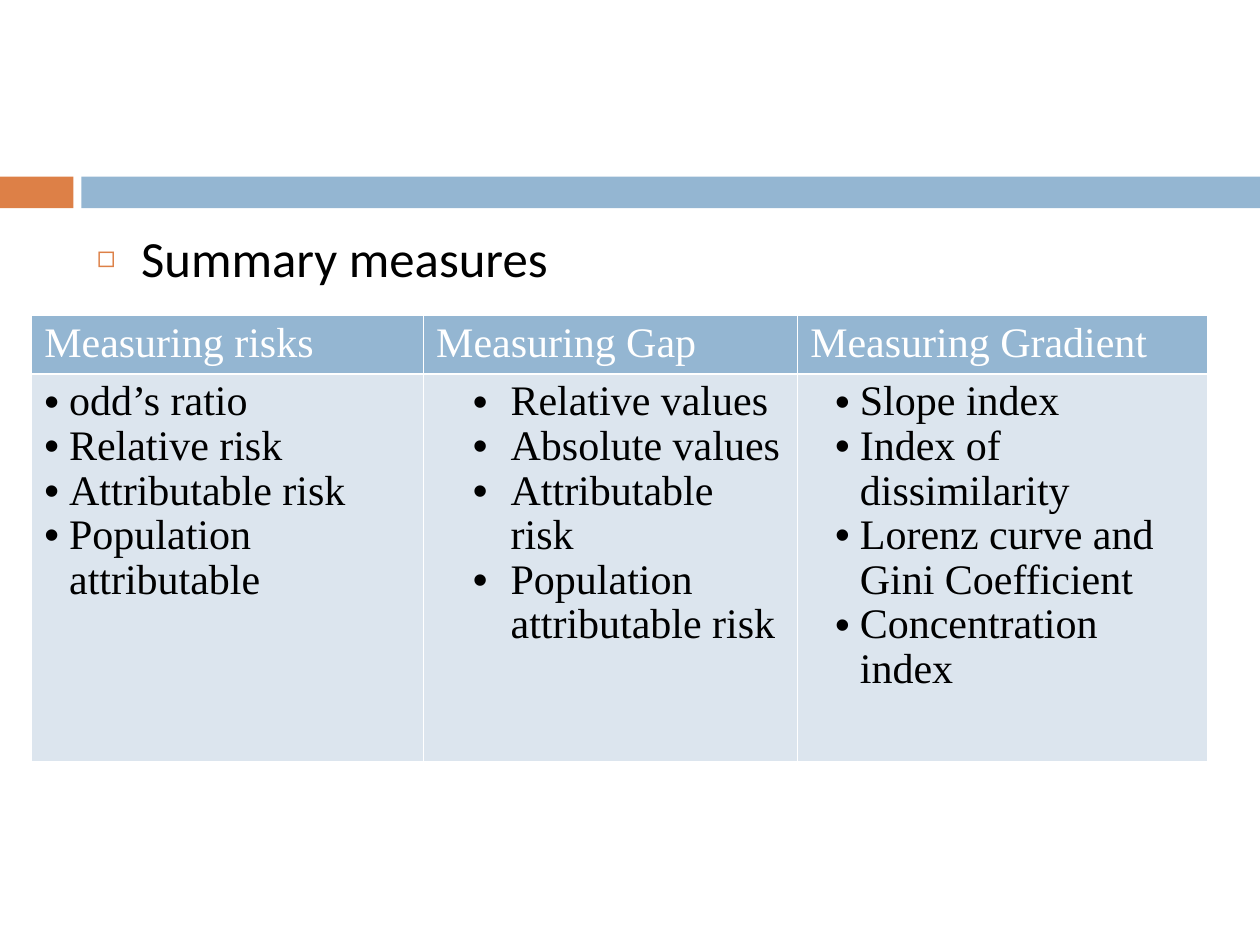
from pptx import Presentation
from pptx.dml.color import RGBColor
from pptx.enum import shapes, text
from pptx.oxml import parse_xml
from pptx.oxml.ns import nsdecls
from pptx.util import Cm, Pt

BLUE, ORANGE, PALE, WHITE, BLACK = "94B6D2", "DD8047", "DCE5EE", "FFFFFF", "000000"
HEADING = "Summary measures"
LEFT, JUSTIFY = text.PP_ALIGN.LEFT, text.PP_ALIGN.JUSTIFY
BARS = [(0, 1.48, ORANGE), (1.64, 23.76, BLUE)]
COLUMNS = [
    dict(title="Measuring risks", width=7.9, margin=0.5, hang=0.5, align=LEFT,
         items=["odd’s ratio", "Relative risk", "Attributable risk",
                "Population attributable"]),
    dict(title="Measuring Gap", width=7.54, margin=1.5, hang=0.76, align=JUSTIFY,
         items=["Relative values", "Absolute values", "Attributable risk",
                "Population attributable risk"]),
    dict(title="Measuring Gradient", width=8.26, margin=1, hang=0.5, align=LEFT,
         items=["Slope index", "Index of dissimilarity",
                "Lorenz curve and Gini Coefficient", "Concentration index"]),
]
ROW_HEIGHTS = [1.18, 7.82]


def rgb(value):
    return RGBColor.from_string(value)


def fill(obj, color):
    obj.fill.solid()
    obj.fill.fore_color.rgb = rgb(color)


def write(tf, lines, size=24, font="Times New Roman", color=BLACK, align=LEFT,
          spacing=0.96, before=0, bullet=None, bullet_color=BLACK,
          bullet_size=100, margin=0, hang=0):
    for i, line in enumerate(lines):
        p = tf.add_paragraph() if i else tf.paragraphs[0]
        p.alignment, p.line_spacing, p.space_before = align, spacing, Pt(before)
        r = p.add_run()
        r.text = line
        r.font.size, r.font.name, r.font.bold = Pt(size), font, False
        r.font.color.rgb = rgb(color)
        if bullet:
            pPr = p._p.get_or_add_pPr()
            pPr.set("marL", str(Cm(margin)))
            pPr.set("indent", str(-Cm(hang)))
            for tag in (f'buClr {nsdecls("a")}><a:srgbClr val="{bullet_color}"/></a:buClr',
                        f'buSzPct {nsdecls("a")} val="{bullet_size * 1000}"/',
                        f'buFont {nsdecls("a")} typeface="Arial"/',
                        f'buChar {nsdecls("a")} char="{bullet}"/'):
                pPr.append(parse_xml(f"<a:{tag}>"))


def border(cell, color=WHITE, width=1):
    tcPr = cell._tc.get_or_add_tcPr()
    for side in "LRTB":
        tcPr.append(parse_xml(
            f'<a:ln{side} {nsdecls("a")} w="{Pt(width)}"><a:solidFill>'
            f'<a:srgbClr val="{color}"/></a:solidFill></a:ln{side}>'))


def main():
    prs = Presentation()
    prs.slide_width, prs.slide_height = Cm(25.4), Cm(19.05)
    s = prs.slides.add_slide(prs.slide_layouts[1])
    title = s.shapes.title._element
    title.getparent().remove(title)

    for left, width, color in BARS:
        sp = s.shapes.add_shape(shapes.MSO_SHAPE.RECTANGLE,
                                Cm(left), Cm(3.56), Cm(width), Cm(0.64))
        sp.shadow.inherit = False
        fill(sp, color)
        sp.line.fill.background()

    body = s.placeholders[1]
    body.left, body.top, body.width, body.height = Cm(1.7), Cm(4.45), Cm(22.66), Cm(12.5)
    body.text_frame.auto_size = text.MSO_AUTO_SIZE.NONE
    write(body.text_frame, [HEADING], size=29, font="Calibri", spacing=1, before=7,
          bullet="◻", bullet_color=ORANGE, bullet_size=60, margin=0.89, hang=0.89)

    table = s.shapes.add_table(2, len(COLUMNS), Cm(0.64), Cm(6.36),
                               Cm(sum(c["width"] for c in COLUMNS)),
                               Cm(sum(ROW_HEIGHTS))).table
    for row, height in zip(table.rows, ROW_HEIGHTS):
        row.height = Cm(height)
    for i, col in enumerate(COLUMNS):
        table.columns[i].width = Cm(col["width"])
        head, cell = table.cell(0, i), table.cell(1, i)
        write(head.text_frame, [col["title"]], color=WHITE)
        write(cell.text_frame, col["items"], align=col["align"], bullet="•",
              margin=col["margin"], hang=col["hang"])
        for c, color in ((head, BLUE), (cell, PALE)):
            border(c)
            fill(c, color)

    prs.save("out.pptx")


if __name__ == "__main__":
    main()
